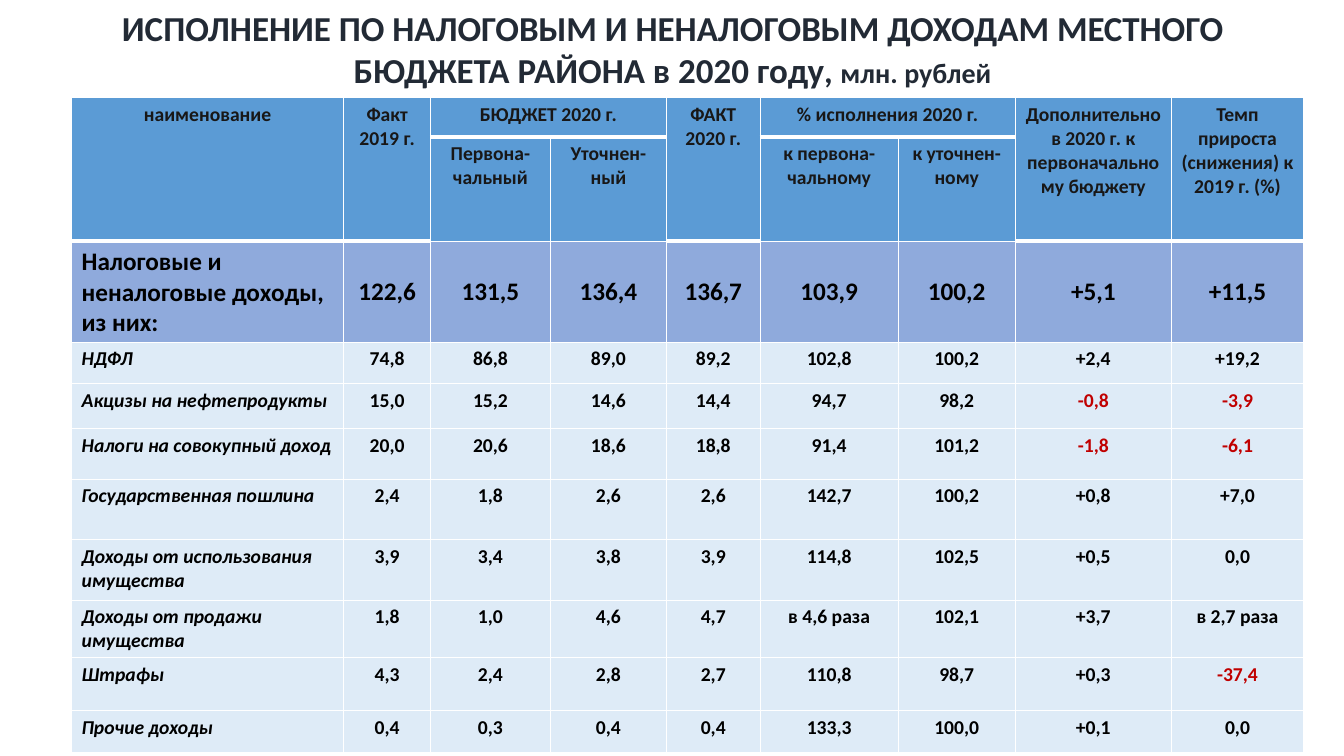
import pptx
import pptx.util
import pptx.dml.color
import pptx.enum.text
import pptx.oxml
import pptx.oxml.ns

EMU_PER_PX = 9144
ALIGN = pptx.enum.text.PP_ALIGN
ANCHOR = pptx.enum.text.MSO_ANCHOR

COLUMN_WIDTHS = [270, 86, 119, 115, 93, 137, 116, 155, 131]
ROW_HEIGHTS = [39, 103, 100, 41, 45, 50, 60, 60, 53, 53, 41]
HEADER_FILL, TOTAL_FILL, ROW_FILL = "5B9BD5", "8FAADC", "DEEBF7"
HEADER_COLOR, BODY_COLOR, NEGATIVE_COLOR = "181717", "000000", "C00000"

TITLE_RUNS = [
    ("ИСПОЛНЕНИЕ ПО НАЛОГОВЫМ И НЕНАЛОГОВЫМ ДОХОДАМ МЕСТНОГО БЮДЖЕТА РАЙОНА в 2020 году", 25),
    (", ", 24),
    ("млн. рублей", 20),
]
TALL_HEADERS = {
    0: "наименование",
    1: "Факт 2019 г.",
    4: "ФАКТ 2020 г.",
    7: "Дополнительно в 2020 г. к первоначальному бюджету",
    8: "Темп прироста (снижения) к 2019 г. (%)",
}
GROUP_HEADERS = {
    2: ("БЮДЖЕТ 2020 г.", "Первона-чальный", "Уточнен-ный"),
    5: ("% исполнения 2020 г.", "к первона-чальному", "к уточнен-ному"),
}
TOTAL = ["Налоговые и неналоговые доходы, из них:",
         "122,6", "131,5", "136,4", "136,7", "103,9", "100,2", "+5,1", "+11,5"]
INCOMES = [
    ["НДФЛ", "74,8", "86,8", "89,0", "89,2", "102,8", "100,2", "+2,4", "+19,2"],
    ["Акцизы на нефтепродукты", "15,0", "15,2", "14,6", "14,4", "94,7", "98,2", "-0,8", "-3,9"],
    ["Налоги на совокупный доход", "20,0", "20,6", "18,6", "18,8", "91,4", "101,2", "-1,8", "-6,1"],
    ["Государственная пошлина", "2,4", "1,8", "2,6", "2,6", "142,7", "100,2", "+0,8", "+7,0"],
    ["Доходы от использования имущества", "3,9", "3,4", "3,8", "3,9", "114,8", "102,5", "+0,5", "0,0"],
    ["Доходы от продажи имущества", "1,8", "1,0", "4,6", "4,7", "в 4,6 раза", "102,1", "+3,7", "в 2,7 раза"],
    ["Штрафы", "4,3", "2,4", "2,8", "2,7", "110,8", "98,7", "+0,3", "-37,4"],
    ["Прочие доходы", "0,4", "0,3", "0,4", "0,4", "133,3", "100,0", "+0,1", "0,0"],
]


def px(length):
    return pptx.util.Emu(length * EMU_PER_PX)


def rgb(color):
    return pptx.dml.color.RGBColor.from_string(color)


def add_text(paragraph, text, size=14, color=BODY_COLOR, bold=True, italic=False, align=ALIGN.CENTER):
    paragraph.alignment = align
    run = paragraph.add_run()
    run.text = text
    run.font.name = "Calibri"
    run.font.size = pptx.util.Pt(size)
    run.font.bold = bold
    run.font.italic = italic
    run.font.color.rgb = rgb(color)


def set_borders(cell, bottom):
    properties = cell._tc.get_or_add_tcPr()
    for side, points in (("L", 1), ("R", 1), ("T", 1), ("B", bottom)):
        properties.append(pptx.oxml.parse_xml(
            f'<a:ln{side} {pptx.oxml.ns.nsdecls("a")} w="{pptx.util.Pt(points)}">'
            f'<a:solidFill><a:srgbClr val="FFFFFF"/></a:solidFill></a:ln{side}>'))


def style_cell(cell, fill, bottom=1):
    set_borders(cell, bottom)
    cell.fill.solid()
    cell.fill.fore_color.rgb = rgb(fill)


def add_title(slide):
    title = slide.shapes.title
    title.left, title.top, title.width, title.height = px(32), px(-1), px(1270), px(98)
    frame = title.text_frame
    frame.word_wrap = True
    frame.auto_size = pptx.enum.text.MSO_AUTO_SIZE.SHAPE_TO_FIT_TEXT
    frame.vertical_anchor = ANCHOR.MIDDLE
    for text, size in TITLE_RUNS:
        add_text(frame.paragraphs[0], text, size=size, color="222A35")


def add_header_text(cell, text):
    add_text(cell.text_frame.paragraphs[0], text, color=HEADER_COLOR)


def fill_header(table):
    for column in range(len(COLUMN_WIDTHS)):
        style_cell(table.cell(0, column), HEADER_FILL, bottom=3)
        style_cell(table.cell(1, column), HEADER_FILL, bottom=3 if column in TALL_HEADERS else 1)
    for column, text in TALL_HEADERS.items():
        table.cell(0, column).merge(table.cell(1, column))
        add_header_text(table.cell(0, column), text)
    for column, (group, first, second) in GROUP_HEADERS.items():
        table.cell(0, column).merge(table.cell(0, column + 1))
        add_header_text(table.cell(0, column), group)
        add_header_text(table.cell(1, column), first)
        add_header_text(table.cell(1, column + 1), second)


def fill_row(table, row, values, fill, size=14, italic_name=True, anchor=ANCHOR.TOP):
    for column, value in enumerate(values):
        cell = table.cell(row, column)
        style_cell(cell, fill)
        is_name = column == 0
        cell.vertical_anchor = ANCHOR.TOP if is_name else anchor
        add_text(cell.text_frame.paragraphs[0], value, size=size,
                 color=NEGATIVE_COLOR if value.startswith("-") else BODY_COLOR,
                 italic=is_name and italic_name,
                 align=ALIGN.LEFT if is_name else ALIGN.CENTER)


def add_income_table(slide):
    frame = slide.shapes.add_table(len(ROW_HEIGHTS), len(COLUMN_WIDTHS), px(71), px(97),
                                   px(sum(COLUMN_WIDTHS)), px(sum(ROW_HEIGHTS)))
    table = frame.table
    table.first_row = False
    table.horz_banding = False
    for column, width in zip(table.columns, COLUMN_WIDTHS):
        column.width = px(width)
    for row, height in zip(table.rows, ROW_HEIGHTS):
        row.height = px(height)
    fill_header(table)
    fill_row(table, 2, TOTAL, TOTAL_FILL, size=18, italic_name=False, anchor=ANCHOR.MIDDLE)
    for row, values in enumerate(INCOMES, start=3):
        fill_row(table, row, values, ROW_FILL)


def main():
    presentation = pptx.Presentation()
    presentation.slide_width, presentation.slide_height = px(1333), px(750)
    slide = presentation.slides.add_slide(presentation.slide_layouts[5])
    add_title(slide)
    add_income_table(slide)
    presentation.save("out.pptx")


if __name__ == "__main__":
    main()
